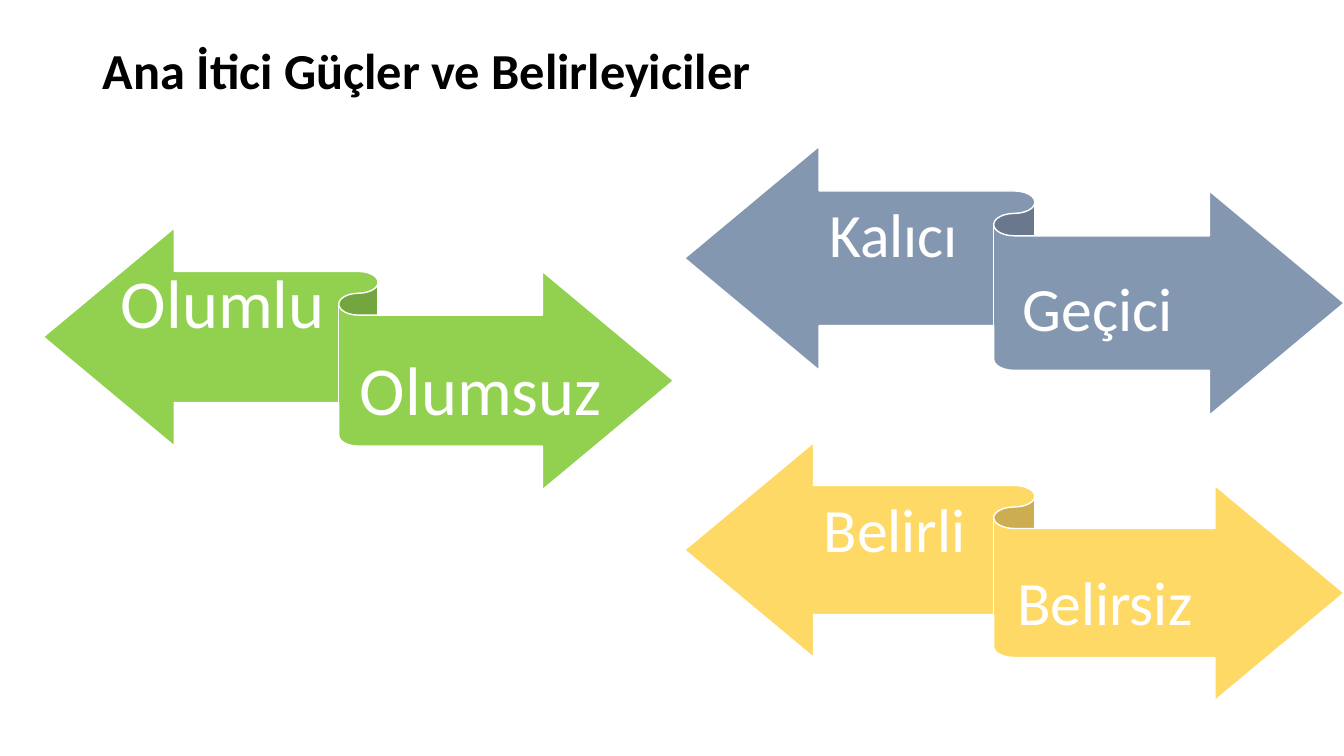
from pptx import Presentation
from pptx.dml.color import RGBColor
from pptx.enum.shapes import MSO_SHAPE
from pptx.enum.text import MSO_ANCHOR, PP_ALIGN
from pptx.util import Inches, Pt

COLORS = {
    "black": "000000",
    "white": "FFFFFF",
    "green": "92D050",
    "yellow": "FFD966",
    "blue": "8497B0",
}
FONT = "Calibri"
SECOND_WORD_INDENT = Inches(1.92)


def color(name):
    return RGBColor.from_string(COLORS[name])


def format_runs(paragraph, size, color_name, bold=False):
    for run in paragraph.runs:
        run.font.name = FONT
        run.font.size = Pt(size)
        run.font.bold = bold
        run.font.color.rgb = color(color_name)


def set_title(slide, text):
    title = slide.shapes.title
    title.left, title.top = Inches(0.92), Inches(0)
    title.width, title.height = Inches(11.5), Inches(1.45)
    text_frame = title.text_frame
    text_frame.text = text
    text_frame.vertical_anchor = MSO_ANCHOR.MIDDLE
    paragraph = text_frame.paragraphs[0]
    paragraph.alignment = PP_ALIGN.LEFT
    paragraph.line_spacing = 0.9
    format_runs(paragraph, 36, "black", bold=True)


def add_ribbon(shapes, box, fill):
    ribbon = shapes.add_shape(MSO_SHAPE.LEFT_RIGHT_RIBBON, *map(Inches, box))
    ribbon.shadow.inherit = False
    ribbon.fill.solid()
    ribbon.fill.fore_color.rgb = color(fill)
    ribbon.line.color.rgb = color("white")
    ribbon.line.width = Pt(1)
    return ribbon


def add_label(shapes, box, text):
    label = shapes.add_textbox(*map(Inches, box))
    text_frame = label.text_frame
    text_frame.text = text
    text_frame.word_wrap = True
    text_frame.vertical_anchor = MSO_ANCHOR.MIDDLE
    text_frame.margin_left = text_frame.margin_right = Inches(0)
    text_frame.margin_top, text_frame.margin_bottom = Inches(0.19), Inches(0.2)
    paragraph = text_frame.paragraphs[0]
    paragraph.alignment = PP_ALIGN.CENTER
    paragraph.line_spacing = 0.9
    format_runs(paragraph, 49, "white")


def write_pair(ribbon, words):
    text_frame = ribbon.text_frame
    text_frame.text = "\n".join(words)
    text_frame.word_wrap = True
    text_frame.vertical_anchor = MSO_ANCHOR.TOP
    for paragraph in text_frame.paragraphs:
        paragraph.alignment = PP_ALIGN.LEFT
        format_runs(paragraph, 44, "white")
    properties = text_frame.paragraphs[1]._p.get_or_add_pPr()
    properties.set("marL", str(SECOND_WORD_INDENT))


def main():
    presentation = Presentation()
    presentation.slide_width = Inches(13.33)
    presentation.slide_height = Inches(7.5)
    slide = presentation.slides.add_slide(presentation.slide_layouts[5])
    set_title(slide, "Ana İtici Güçler ve Belirleyiciler")

    effect_group = slide.shapes.add_group_shape()
    add_ribbon(effect_group.shapes, (0.43, 2.26, 6.25, 2.6), "green")
    add_label(effect_group.shapes, (1.18, 2.43, 2.06, 1.22), "Olumlu")
    add_label(effect_group.shapes, (3.55, 3.3, 2.44, 1.22), "Olumsuz")

    certainty = add_ribbon(slide.shapes, (6.79, 4.39, 6.54, 2.56), "yellow")
    write_pair(certainty, ("Belirli", "Belirsiz"))
    duration = add_ribbon(slide.shapes, (6.79, 1.45, 6.54, 2.67), "blue")
    write_pair(duration, ("Kalıcı", "Geçici"))

    presentation.save("out.pptx")


if __name__ == "__main__":
    main()
